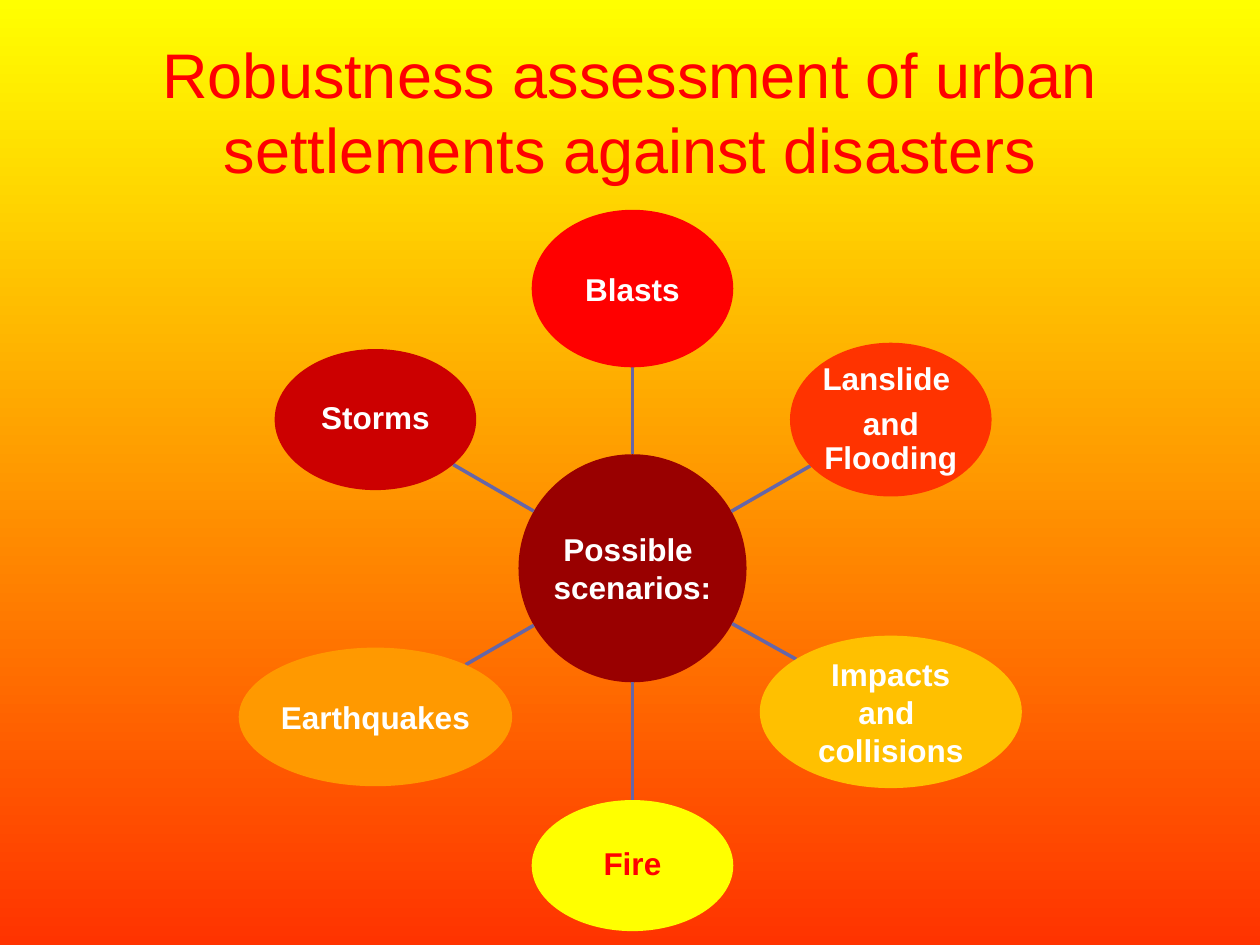
from dataclasses import dataclass
from math import hypot

from lxml.etree import SubElement
from pptx import Presentation
from pptx.dml.color import RGBColor
from pptx.enum.shapes import MSO_CONNECTOR, MSO_SHAPE
from pptx.enum.text import MSO_ANCHOR, PP_ALIGN
from pptx.oxml.ns import qn
from pptx.util import Inches, Pt


@dataclass
class Bubble:
    lines: list[str]
    x: float  # centre
    y: float
    w: float
    h: float
    fill: str
    color: str = "FFFFFF"
    tight: bool = False


MID, LEFT, RIGHT = 5.02, 2.98, 7.07
HUB = Bubble(["Possible ", "scenarios:"], MID, 4.51, 1.81, 1.81, "990000")
SCENARIOS = [
    Bubble(["Blasts"], MID, 2.29, 1.6, 1.25, "FF0000"),
    Bubble(["Lanslide ", "and Flooding"], RIGHT, 3.33, 1.6, 1.22, "FF3300", tight=True),
    Bubble([" Impacts ", "and ", "collisions"], RIGHT, 5.65, 2.08, 1.21, "FFC000"),
    Bubble(["Fire"], MID, 6.87, 1.6, 1.04, "FFFF00", "FF0000", True),
    Bubble(["Earthquakes"], LEFT, 5.69, 2.17, 1.1, "FF9900"),
    Bubble(["Storms"], LEFT, 3.33, 1.6, 1.12, "CC0000", tight=True),
]


def rgb(value: str) -> RGBColor:
    return RGBColor.from_string(value)


def write(tf, lines: list[str], size: int, color: str, bold: bool, inset: float,
          tight: bool = False) -> None:
    frame = {"word_wrap": True, "vertical_anchor": MSO_ANCHOR.MIDDLE}
    frame |= {f"margin_{side}": Inches(inset) for side in ("left", "top", "right", "bottom")}
    for name, value in frame.items():
        setattr(tf, name, value)
    for i, line in enumerate(lines):
        p = tf.add_paragraph() if i else tf.paragraphs[0]
        p.alignment = PP_ALIGN.CENTER
        if tight:
            p.line_spacing, p.space_after = 0.9, Pt(6.3)
        r = p.add_run()
        r.text = line
        for name, value in {"name": "Arial", "size": Pt(size), "bold": bold}.items():
            setattr(r.font, name, value)
        r.font.color.rgb = rgb(color)


def draw_bubble(s, b: Bubble) -> None:
    sp = s.shapes.add_shape(MSO_SHAPE.OVAL, Inches(b.x - b.w / 2), Inches(b.y - b.h / 2),
                            Inches(b.w), Inches(b.h))
    sp.shadow.inherit = False
    sp.fill.solid()
    sp.fill.fore_color.rgb = rgb(b.fill)
    sp.line.fill.background()
    write(sp.text_frame, b.lines, 18, b.color, True, 0.01, b.tight)


def edge_point(b: Bubble, target: Bubble) -> tuple[int, int]:
    """Point where the line from b's centre to target's centre crosses b's outline."""
    dx, dy = target.x - b.x, target.y - b.y
    t = 1 / hypot(dx / (b.w / 2), dy / (b.h / 2))
    return Inches(b.x + t * dx), Inches(b.y + t * dy)


def draw_spoke(s, hub: Bubble, b: Bubble) -> None:
    line = s.shapes.add_connector(MSO_CONNECTOR.STRAIGHT, *edge_point(hub, b),
                                  *edge_point(b, hub))
    line.line.width = Pt(2)
    line.line.color.rgb = rgb("6666A7")
    SubElement(line._element.spPr, qn("a:effectLst"))


def paint_background(s, colors: list[str]) -> None:
    fill = s.background.fill
    fill.gradient()
    fill.gradient_angle = 270
    for position, (stop, color) in enumerate(zip(fill.gradient_stops, colors)):
        stop.position = position
        stop.color.rgb = rgb(color)


def main() -> None:
    prs = Presentation()
    prs.slide_width, prs.slide_height = Inches(10), Inches(7.5)
    s = prs.slides.add_slide(prs.slide_layouts[6])
    paint_background(s, ["FFFF00", "FF3300"])
    draw_bubble(s, HUB)
    for b in SCENARIOS:
        draw_spoke(s, HUB, b)
        draw_bubble(s, b)
    title = s.shapes.add_textbox(Inches(0.5), Inches(0.17), Inches(9), Inches(1.42))
    write(title.text_frame, ["Robustness assessment of urban settlements against disasters"],
          36, "FF0000", False, 0.08)
    prs.save("out.pptx")


if __name__ == "__main__":
    main()
